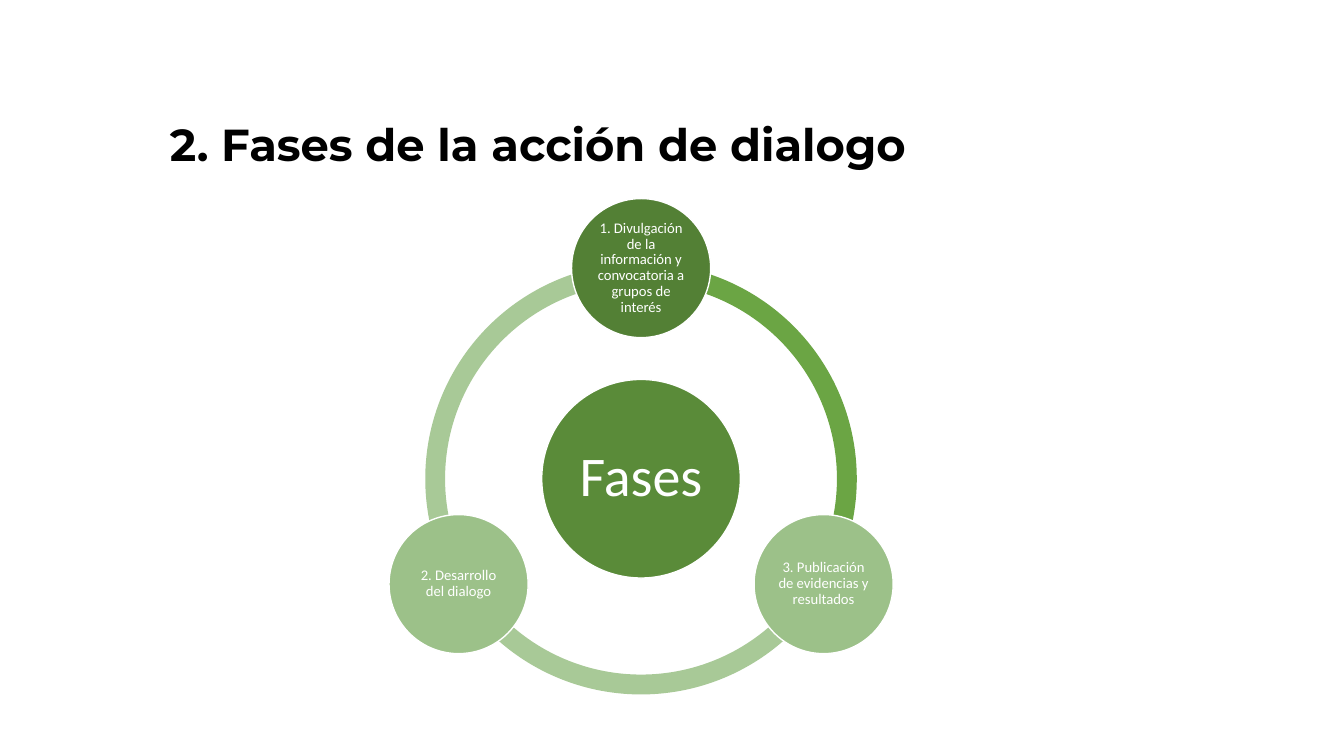
from math import cos, radians, sin

from pptx import Presentation
from pptx.dml.color import RGBColor
from pptx.enum.shapes import MSO_SHAPE
from pptx.enum.text import MSO_ANCHOR, MSO_AUTO_SIZE, PP_ALIGN
from pptx.util import Inches, Pt

BLOCK_ARC, OVAL = MSO_SHAPE.BLOCK_ARC, MSO_SHAPE.OVAL
MIDDLE, BOTTOM = MSO_ANCHOR.MIDDLE, MSO_ANCHOR.BOTTOM
CENTER, NO_AUTOFIT = PP_ALIGN.CENTER, MSO_AUTO_SIZE.NONE

WIDTH, HEIGHT = Inches(13.33), Inches(7.5)
COLORS = {
    "title": "000000",
    "white": "FFFFFF",
    "hub": "5A8B39",
    "active": "538035",
    "pending": "9CC189",
    "active_arc": "6BA544",
    "pending_arc": "A8C997",
}

# Cycle measures: percent of the slide's height, centre in percent of each side
CENTER_X, CENTER_Y = 47.7, 63.33
ORBIT, RING, HUB, NODE = 27.87, 57.07, 26.27, 18.4
ARC_SPAN = 120
ARC_THICKNESS = 0.046

# Each phase: text, angle clockwise from the right, its colour, colour of the arc after it
PHASES = [
    ("1. Divulgación de la información y convocatoria a grupos de interés",
     270, "active", "active_arc"),
    ("3. Publicación de evidencias y resultados", 30, "pending", "pending_arc"),
    ("2. Desarrollo del dialogo", 150, "pending", "pending_arc"),
]


def across(percent):
    return round(WIDTH * percent / 100)


def down(percent):
    return round(HEIGHT * percent / 100)


def color(name):
    return RGBColor.from_string(COLORS[name])


def write_text(text_frame, text, anchor, font_format, color_name):
    frame_format = {"word_wrap": True, "auto_size": NO_AUTOFIT,
                    "vertical_anchor": anchor}
    for name, value in frame_format.items():
        setattr(text_frame, name, value)
    paragraph = text_frame.paragraphs[0]
    paragraph.text = text
    paragraph.alignment = CENTER
    paragraph.line_spacing = 0.9
    font = paragraph.runs[0].font
    for name, value in font_format.items():
        setattr(font, name, value)
    font.color.rgb = color(color_name)


def add_title(slide, text):
    title = slide.shapes.title
    place = {"left": across(2.55), "top": down(14.53),
             "width": across(75), "height": down(8.8)}
    for name, value in place.items():
        setattr(title, name, value)
    write_text(title.text_frame, text, BOTTOM,
               {"name": "Montserrat", "size": Pt(32), "bold": True}, "title")


def add_round_shape(slide, kind, diameter, fill, angle=0, orbit=0):
    """Centre a shape on the cycle, or on its orbit at the given angle."""
    size = down(diameter)
    center_x = across(CENTER_X) + down(orbit * cos(radians(angle)))
    center_y = down(CENTER_Y + orbit * sin(radians(angle)))
    shape = slide.shapes.add_shape(
        kind, center_x - size // 2, center_y - size // 2, size, size)
    shape.shadow.inherit = False
    shape.fill.solid()
    shape.fill.fore_color.rgb = color(fill)
    return shape


def add_arc(slide, start, fill):
    arc = add_round_shape(slide, BLOCK_ARC, RING, fill)
    arc.line.fill.background()
    # Angles are stored in 60000ths of a degree, adjustments in 100000ths
    for index, angle in enumerate((start, (start + ARC_SPAN) % 360)):
        arc.adjustments[index] = angle * 0.6
    arc.adjustments[2] = ARC_THICKNESS


def add_circle(slide, text, diameter, fill, text_size, margin, angle=0, orbit=0):
    circle = add_round_shape(slide, OVAL, diameter, fill, angle, orbit)
    circle.line.color.rgb = color("white")
    circle.line.width = Pt(1)
    for side in ("left", "top", "right", "bottom"):
        setattr(circle.text_frame, f"margin_{side}", Inches(margin))
    write_text(circle.text_frame, text, MIDDLE,
               {"name": "Calibri", "size": Pt(text_size)}, "white")


def main():
    presentation = Presentation()
    presentation.slide_width, presentation.slide_height = WIDTH, HEIGHT
    slide = presentation.slides.add_slide(presentation.slide_layouts[0])
    subtitle = slide.placeholders[1].element
    subtitle.getparent().remove(subtitle)

    add_title(slide, "2. Fases de la acción de dialogo")
    for _, angle, _, arc_fill in reversed(PHASES):
        add_arc(slide, angle, arc_fill)
    add_circle(slide, "Fases", HUB, "hub", 40, 0.06)
    for text, angle, fill, _ in PHASES:
        add_circle(slide, text, NODE, fill, 10.5, 0.02, angle, ORBIT)
    presentation.save("out.pptx")


if __name__ == "__main__":
    main()
